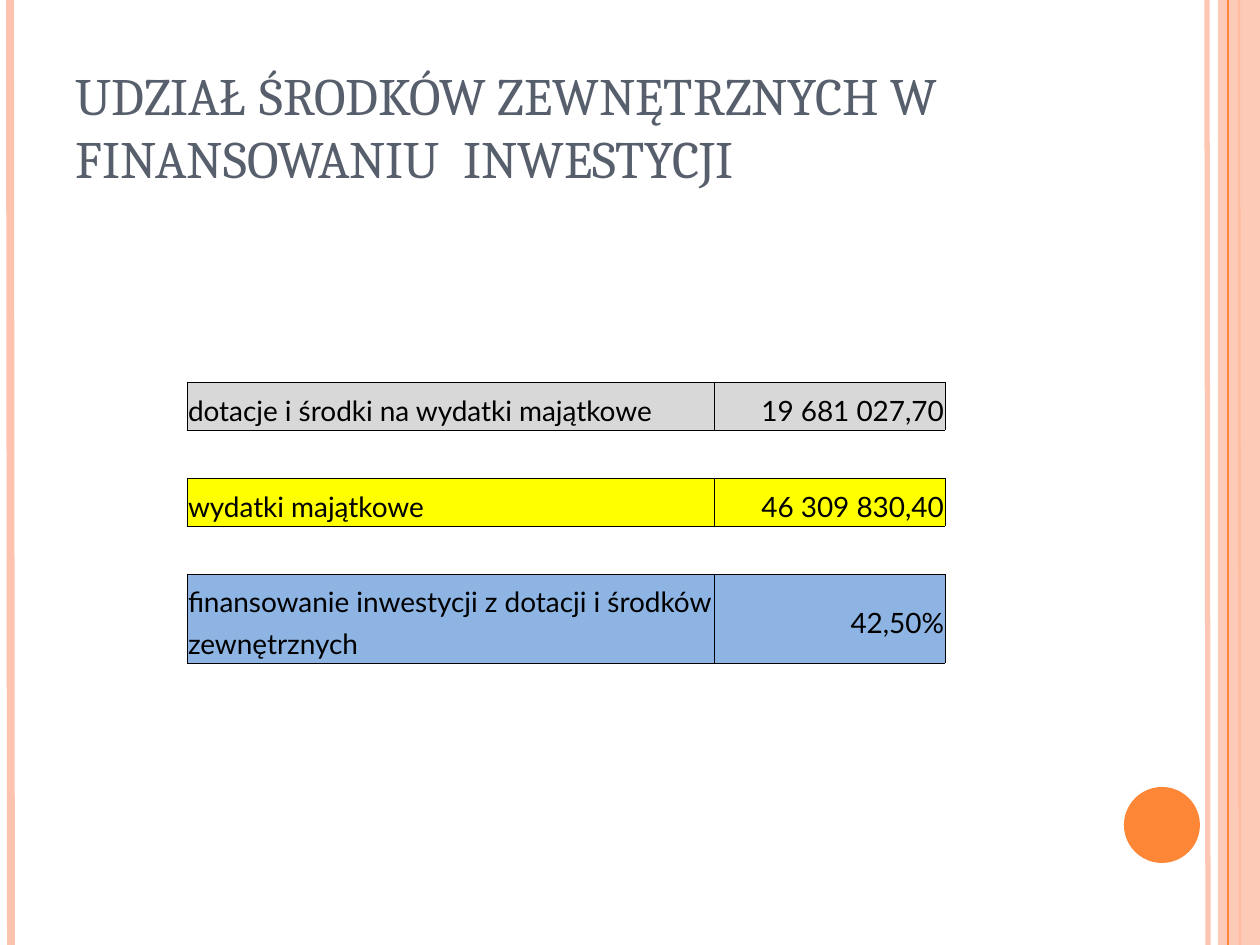
from lxml.etree import SubElement
from pptx import Presentation
from pptx.dml.color import RGBColor
from pptx.enum.shapes import MSO_CONNECTOR, MSO_SHAPE
from pptx.enum.text import MSO_ANCHOR, PP_ALIGN
from pptx.oxml.ns import qn
from pptx.util import Emu, Pt

PX_PER_INCH = 126
SLIDE_WIDTH, SLIDE_HEIGHT = 1260, 945

PEACH = RGBColor(0xFE, 0xC3, 0xAE)
ORANGE = RGBColor(0xFE, 0x86, 0x37)
SLATE = RGBColor(0x57, 0x5F, 0x6D)
BLACK = RGBColor(0x00, 0x00, 0x00)
GREY = RGBColor(0xD8, 0xD8, 0xD8)
YELLOW = RGBColor(0xFF, 0xFF, 0x00)
BLUE = RGBColor(0x8D, 0xB4, 0xE3)

TITLE = "UDZIAŁ ŚRODKÓW ZEWNĘTRZNYCH W FINANSOWANIU  INWESTYCJI"
COLUMN_WIDTHS = (527, 231)
# Label, amount, fill and height; None marks a gap row.
FINANCING_ROWS = (
    ("dotacje i środki na wydatki majątkowe", "19 681 027,70", GREY, 48),
    ("", "", None, 48),
    ("wydatki majątkowe", "46 309 830,40", YELLOW, 48),
    ("", "", None, 48),
    ("finansowanie inwestycji z dotacji i środków zewnętrznych", "42,50%", BLUE, 89),
)


def px(length):
    return Emu(round(length * 914400 / PX_PER_INCH))


def set_attributes(target, values):
    for name, value in values.items():
        setattr(target, name, value)


def set_opacity(filled, percent):
    color = filled.find(".//" + qn("a:srgbClr"))
    SubElement(color, qn("a:alpha"), val=str(percent * 1000))


def add_stripe(slide, top_x, bottom_x, color, width, opacity=100):
    """Draw a line down the full height of the slide."""
    stripe = slide.shapes.add_connector(
        MSO_CONNECTOR.STRAIGHT, px(top_x), 0, px(bottom_x), px(SLIDE_HEIGHT))
    stripe.line.color.rgb = color
    stripe.line.width = Pt(width)
    properties = stripe._element.spPr
    SubElement(properties, qn("a:effectLst"))
    if opacity < 100:
        set_opacity(properties, opacity)


def add_filled_shape(slide, preset, box, color, opacity=100):
    shape = slide.shapes.add_shape(preset, *map(px, box))
    shape.shadow.inherit = False
    shape.fill.solid()
    shape.fill.fore_color.rgb = color
    shape.line.fill.background()
    if opacity < 100:
        set_opacity(shape._element.spPr, opacity)


def write_text(paragraph, text, font_name, size, color):
    run = paragraph.add_run()
    run.text = text
    set_attributes(run.font, {"name": font_name, "size": Pt(size)})
    run.font.color.rgb = color


def add_title(slide, box):
    frame = slide.shapes.add_textbox(*map(px, box)).text_frame
    set_attributes(frame, {"word_wrap": True, "vertical_anchor": MSO_ANCHOR.BOTTOM})
    write_text(frame.paragraphs[0], TITLE, "Cambria", 30, SLATE)


def set_borders(cell, visible_sides):
    properties = cell._tc.get_or_add_tcPr()
    for side in "LRTB":
        border = SubElement(properties, qn(f"a:ln{side}"), w=str(Pt(0.06)))
        if side in visible_sides:
            fill = SubElement(border, qn("a:solidFill"))
            SubElement(fill, qn("a:srgbClr"), val=str(BLACK))
        else:
            SubElement(border, qn("a:noFill"))


def format_cell(cell, text, alignment, color):
    set_attributes(cell, {
        "vertical_anchor": MSO_ANCHOR.MIDDLE,
        "margin_left": px(1), "margin_right": px(1),
        "margin_top": px(1), "margin_bottom": 0,
    })
    set_borders(cell, "LRTB" if color else "TB")
    if color is None:
        cell.fill.background()
        return
    cell.fill.solid()
    cell.fill.fore_color.rgb = color
    paragraph = cell.text_frame.paragraphs[0]
    set_attributes(paragraph, {"alignment": alignment, "line_spacing": 1.25})
    write_text(paragraph, text, "Lato", 16, BLACK)


def add_financing_table(slide, left, top):
    height = sum(row[-1] for row in FINANCING_ROWS)
    table = slide.shapes.add_table(
        len(FINANCING_ROWS), len(COLUMN_WIDTHS),
        px(left), px(top), px(sum(COLUMN_WIDTHS)), px(height)).table
    set_attributes(table, {"first_row": False, "horz_banding": False})
    for column, width in zip(table.columns, COLUMN_WIDTHS):
        column.width = px(width)
    for row, (label, amount, color, row_height) in zip(table.rows, FINANCING_ROWS):
        row.height = px(row_height)
        format_cell(row.cells[0], label, PP_ALIGN.LEFT, color)
        format_cell(row.cells[1], amount, PP_ALIGN.RIGHT, color)


def main():
    presentation = Presentation()
    set_attributes(presentation, {
        "slide_width": px(SLIDE_WIDTH), "slide_height": px(SLIDE_HEIGHT)})
    slide = presentation.slides.add_slide(presentation.slide_layouts[6])

    add_stripe(slide, 1207, 1208, PEACH, 3, opacity=93)
    add_stripe(slide, 10, 11, PEACH, 4.5)
    add_stripe(slide, 1239, 1240, ORANGE, 1.5)
    add_filled_shape(slide, MSO_SHAPE.RECTANGLE,
                     (1218, 0, 42, SLIDE_HEIGHT), PEACH, opacity=87)
    add_stripe(slide, 1228, 1228, ORANGE, 0.75)
    add_filled_shape(slide, MSO_SHAPE.OVAL, (1124, 787, 76, 76), ORANGE)
    add_title(slide, (63, 38, 1029, 157))
    add_financing_table(slide, 187, 382)

    presentation.save("out.pptx")


if __name__ == "__main__":
    main()
